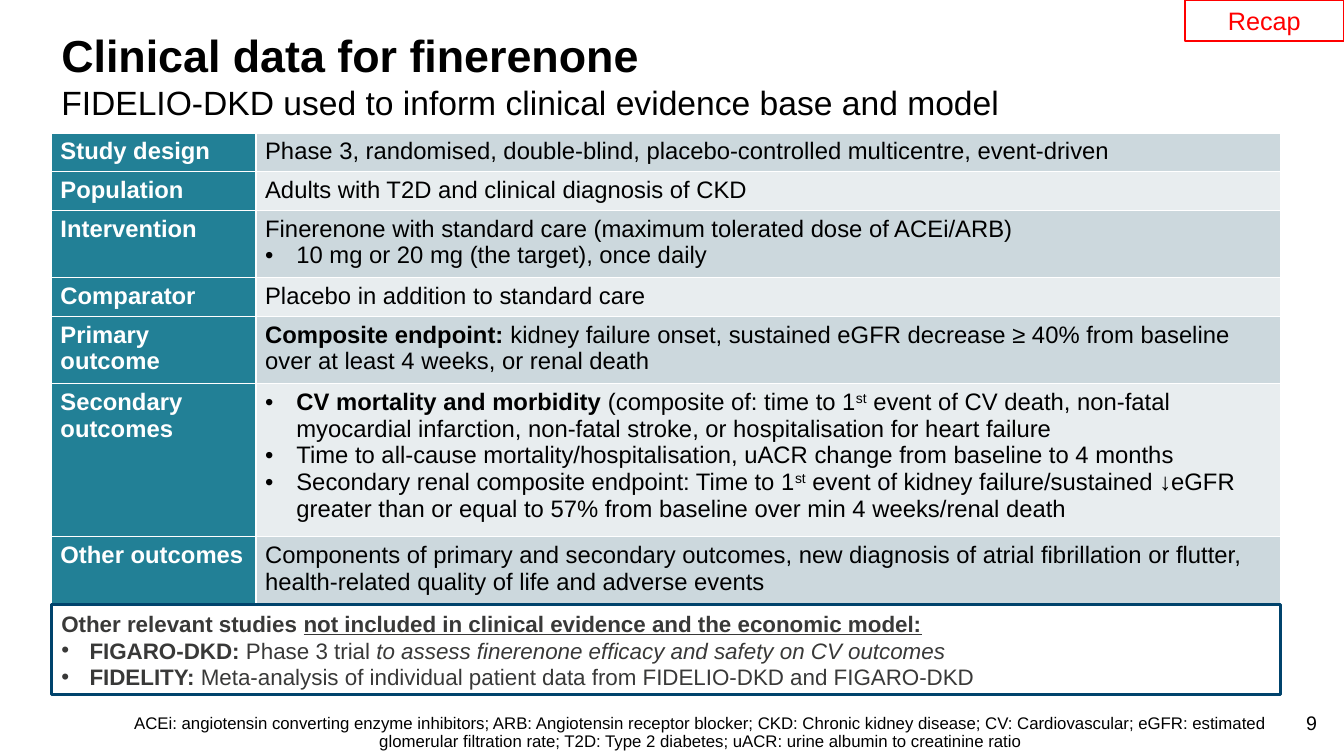
"""Build the slide on clinical data for finerenone."""
from lxml import etree
from pptx import Presentation
from pptx.dml.color import RGBColor as Rgb
from pptx.enum.shapes import MSO_SHAPE as Kind
from pptx.enum.text import MSO_ANCHOR as Anchor, PP_ALIGN as Align
from pptx.oxml.ns import qn
from pptx.util import Inches, Pt

TEAL, BANDS = "228096", ("CCD8DD", "E8EDEF")
BLACK, WHITE, RED, NAVY, GREY = "000000", "FFFFFF", "FF0000", "00436C", "393938"


def tint(code):
    return Rgb.from_string(code)


class Deck:
    """Hold the font and the current slide, and draw each kind of element."""

    def __init__(self, font):
        self.font = font
        self.show = Presentation()
        self.show.slide_width, self.show.slide_height = Inches(13.33), Inches(7.5)
        self.slide = self.show.slides.add_slide(self.show.slide_layouts[6])

    def text(self, frame, paras, size, color, align=Align.LEFT, space=None, hang=0.3):
        """Fill a frame; each paragraph is (bulleted, run, run, ...)."""
        frame.word_wrap = True
        for num, (dot, *runs) in enumerate(paras):
            para = frame.paragraphs[0] if num == 0 else frame.add_paragraph()
            para.alignment, para.line_spacing = align, space
            if dot:
                props = para._p.get_or_add_pPr()
                props.set("marL", str(Inches(hang)))
                props.set("indent", str(-Inches(hang)))
                etree.SubElement(props, qn("a:buFont")).set("typeface", self.font)
                etree.SubElement(props, qn("a:buChar")).set("char", "•")
            for words, marks in runs:
                run = para.add_run()
                run.text = words
                font = run.font
                font.name, font.size = self.font, Pt(size)
                font.color.rgb = tint(color)
                font.bold, font.italic = "b" in marks, "i" in marks
                font.underline = "u" in marks
                if "^" in marks:
                    run._r.get_or_add_rPr().set("baseline", "30000")

    def label(self, area, words, size, marks="", align=Align.LEFT, space=None,
              anchor=Anchor.TOP):
        box = self.slide.shapes.add_textbox(*map(Inches, area))
        box.text_frame.vertical_anchor = anchor
        self.text(box.text_frame, [(False, (words, marks))], size, BLACK, align, space)

    def panel(self, area, paras, size, color, edge, width, align=Align.LEFT,
              anchor=Anchor.TOP):
        box = self.slide.shapes.add_shape(Kind.RECTANGLE, *map(Inches, area))
        box.shadow.inherit = False
        box.fill.solid()
        box.fill.fore_color.rgb = tint(WHITE)
        box.line.color.rgb, box.line.width = tint(edge), Pt(width)
        box.text_frame.vertical_anchor = anchor
        self.text(box.text_frame, paras, size, color, align, hang=0.28)

    def cell(self, cell, paras, fill, color):
        cell.margin_left = cell.margin_right = Inches(0.09)
        cell.margin_top = cell.margin_bottom = Inches(0.05)
        props = cell._tc.get_or_add_tcPr()
        for side in ("a:lnL", "a:lnR", "a:lnT", "a:lnB"):
            line = etree.SubElement(props, qn(side), w=str(Pt(1)))
            paint = etree.SubElement(line, qn("a:solidFill"))
            etree.SubElement(paint, qn("a:srgbClr"), val=WHITE)
        cell.fill.solid()
        cell.fill.fore_color.rgb = tint(fill)
        self.text(cell.text_frame, paras, 17, color, hang=0.31)

    def table(self, area, cols, rows):
        """Draw rows of (heading, line count, paragraphs)."""
        grid = self.slide.shapes.add_table(len(rows), len(cols), *map(Inches, area)).table
        grid.first_row = grid.horz_banding = False
        for col, width in zip(grid.columns, cols):
            col.width = Inches(width)
        for num, (head, lines, paras) in enumerate(rows):
            grid.rows[num].height = Inches(0.09 + 0.265 * lines)
            self.cell(grid.cell(num, 0), [(False, (head, "b"))], TEAL, WHITE)
            self.cell(grid.cell(num, 1), paras, BANDS[num % 2], BLACK)


ROWS = [
    ("Study design", 1, [(False, (
        "Phase 3, randomised, double-blind, placebo-controlled multicentre, event-driven", ""))]),
    ("Population", 1, [(False, ("Adults with T2D and clinical diagnosis of CKD", ""))]),
    ("Intervention", 2, [
        (False, ("Finerenone with standard care (maximum tolerated dose of ACEi/ARB)", "")),
        (True, ("10 mg or 20 mg (the target), once daily", ""))]),
    ("Comparator", 1, [(False, ("Placebo in addition to standard care", ""))]),
    ("Primary outcome", 2, [(
        False, ("Composite endpoint: ", "b"),
        ("kidney failure onset, sustained eGFR decrease ≥ 40% from baseline "
         "over at least 4 weeks, or renal death", ""))]),
    ("Secondary outcomes", 5, [
        (True, ("CV mortality and morbidity ", "b"), ("(composite of: time to 1", ""),
         ("st", "^"), (" event of CV death, non-fatal myocardial infarction, "
                       "non-fatal stroke, or hospitalisation for heart failure", "")),
        (True, ("Time to all-cause mortality/hospitalisation, "
                "uACR change from baseline to 4 months", "")),
        (True, ("Secondary renal composite endpoint: Time to 1", ""), ("st", "^"),
         (" event of kidney failure/sustained ↓eGFR greater than or equal to 57% "
          "from baseline over min 4 weeks/renal death", ""))]),
    ("Other outcomes", 2, [(False, (
        "Components of primary and secondary outcomes, new diagnosis of atrial fibrillation "
        "or flutter, health-related quality of life and adverse events", ""))]),
]
STUDIES = [
    (False, ("Other relevant studies ", "b"),
     ("not included in clinical evidence and the economic model:", "bu")),
    (True, ("FIGARO-DKD: ", "b"), ("Phase 3 trial ", ""),
     ("to assess finerenone efficacy and safety on CV outcomes", "i")),
    (True, ("FIDELITY: ", "b"),
     ("Meta-analysis of individual patient data from FIDELIO-DKD and FIGARO-DKD", "")),
]
TERMS = ("ACEi: angiotensin converting enzyme inhibitors; ARB: Angiotensin receptor blocker; "
         "CKD: Chronic kidney disease; CV: Cardiovascular; eGFR: estimated glomerular "
         "filtration rate; T2D: Type 2 diabetes; uACR: urine albumin to creatinine ratio")


def main():
    deck = Deck("Arial")
    deck.label((12.65, 7, 0.51, 0.4), "9", 14, align=Align.RIGHT)
    deck.label((0.51, 0.29, 12.3, 0.65), "Clinical data for finerenone", 32, "b", space=0.9)
    deck.label((0.51, 0.81, 12.3, 0.57),
               "FIDELIO-DKD used to inform clinical evidence base and model", 24, space=0.9)
    deck.table((0.51, 1.32, 12.19, 4.35), (2.03, 10.16), ROWS)
    deck.panel((0.51, 6, 12.19, 0.89), STUDIES, 16, GREY, NAVY, 2.25)
    deck.panel((11.75, 0, 1.58, 0.41), [(False, ("Recap", ""))], 18, RED, RED, 1.5,
               Align.CENTER, Anchor.MIDDLE)
    deck.label((1.08, 6.98, 11.74, 0.52), TERMS, 12, align=Align.CENTER, space=0.9,
               anchor=Anchor.BOTTOM)
    deck.show.save("out.pptx")


if __name__ == "__main__":
    main()
